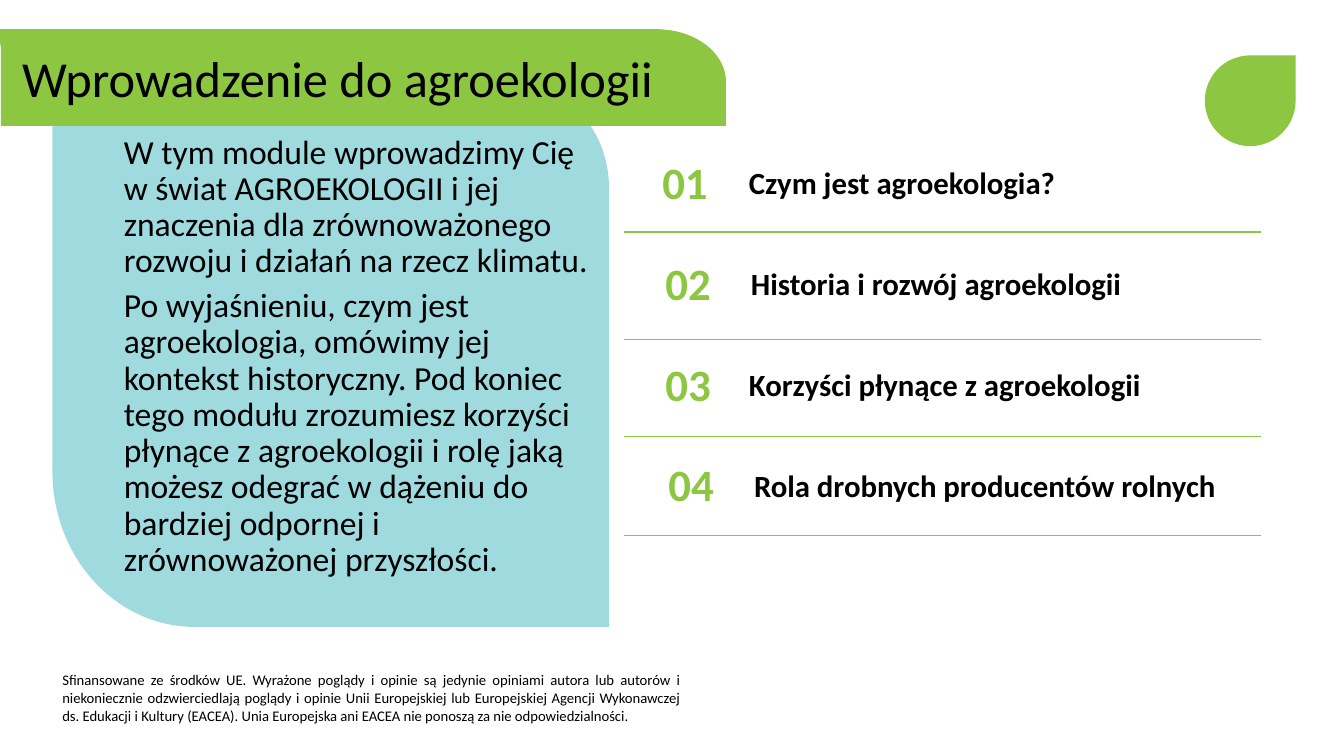
from dataclasses import dataclass
from math import cos, radians, sin

from lxml.etree import SubElement
from pptx import Presentation
from pptx.dml.color import RGBColor
from pptx.enum.shapes import MSO_CONNECTOR, MSO_SHAPE
from pptx.enum.text import MSO_ANCHOR, PP_ALIGN
from pptx.oxml.ns import qn
from pptx.util import Inches, Pt


@dataclass(frozen=True)
class Theme:
    font: str = "Calibri"
    green: RGBColor = RGBColor(0x8D, 0xC6, 0x41)
    blue: RGBColor = RGBColor(0x9F, 0xDA, 0xDF)
    black: RGBColor = RGBColor(0, 0, 0)
    title_size: float = 36
    number_size: float = 32
    body_size: float = 24
    topic_size: float = 22
    footnote_size: float = 10.5


THEME = Theme()

TITLE = "Wprowadzenie do agroekologii"
INTRODUCTION = [
    "W tym module wprowadzimy Cię w świat AGROEKOLOGII i jej znaczenia dla "
    "zrównoważonego rozwoju i działań na rzecz klimatu.",
    "Po wyjaśnieniu, czym jest agroekologia, omówimy jej kontekst historyczny. "
    "Pod koniec tego modułu zrozumiesz korzyści płynące z agroekologii i rolę "
    "jaką możesz odegrać w dążeniu do bardziej odpornej i zrównoważonej przyszłości.",
]
FOOTNOTE = (
    "Sfinansowane ze środków UE. Wyrażone poglądy i opinie są jedynie opiniami "
    "autora lub autorów i niekoniecznie odzwierciedlają poglądy i opinie Unii "
    "Europejskiej lub Europejskiej Agencji Wykonawczej ds. Edukacji i Kultury "
    "(EACEA). Unia Europejska ani EACEA nie ponoszą za nie odpowiedzialności."
)
TOPICS = [
    ("Czym jest agroekologia?", 6.41, 7.33),
    ("Historia i rozwój agroekologii", 6.44, 7.35),
    ("Korzyści płynące z agroekologii", 6.44, 7.33),
    ("Rola drobnych producentów rolnych", 6.47, 7.38),
]
TOPIC_TOP = 1.46
TOPIC_STEP = 1.0
DIVIDER_LEVELS = [2.3, 3.37, 4.33, 5.31]


def rounded_corner(center_x, center_y, radius_x, radius_y, start_angle):
    angles = [radians(start_angle + step * 3) for step in range(31)]
    return [(center_x + radius_x * cos(angle), center_y + radius_y * sin(angle))
            for angle in angles]


def paint(shape, color):
    shape.shadow.inherit = False
    shape.fill.solid()
    shape.fill.fore_color.rgb = color
    shape.line.fill.background()


def add_panel(slide, outline, color):
    points = [(Inches(x), Inches(y)) for x, y in outline]
    builder = slide.shapes.build_freeform(*points[0], scale=1.0)
    builder.add_line_segments(points[1:], close=True)
    paint(builder.convert_to_shape(), color)


def add_divider(slide, level):
    connector = slide.shapes.add_connector(
        MSO_CONNECTOR.STRAIGHT, Inches(6.19), Inches(level), Inches(12.51), Inches(level))
    connector.line.color.rgb = THEME.green
    connector.line.width = Pt(1)
    SubElement(connector._element.spPr, qn("a:effectLst"))


def add_text(slide, box, texts, size, color=THEME.black, bold=False,
             align=PP_ALIGN.LEFT, anchor=MSO_ANCHOR.MIDDLE, line_spacing=0.9):
    frame = slide.shapes.add_textbox(*map(Inches, box)).text_frame
    frame.word_wrap = True
    frame.vertical_anchor = anchor
    for index, text in enumerate(texts):
        paragraph = frame.add_paragraph() if index else frame.paragraphs[0]
        paragraph.text = text
        paragraph.alignment = align
        paragraph.line_spacing = line_spacing
        if index:
            paragraph.space_before = Pt(6)
        paragraph.font.name = THEME.font
        paragraph.font.size = Pt(size)
        paragraph.font.bold = bold
        paragraph.font.color.rgb = color


def add_topic(slide, index, topic, number_left, topic_left):
    top = TOPIC_TOP + index * TOPIC_STEP
    add_text(slide, (number_left, top, 0.77, 0.75), [f"{index + 1:02}"],
             THEME.number_size, THEME.green, bold=True, align=PP_ALIGN.CENTER)
    add_text(slide, (topic_left, top, 4.88, 0.75), [topic], THEME.topic_size, bold=True)


def add_leaf(slide):
    leaf = slide.shapes.add_shape(
        MSO_SHAPE.TEAR, Inches(11.95), Inches(0.55), Inches(0.9), Inches(0.9))
    paint(leaf, THEME.green)


def main():
    presentation = Presentation()
    presentation.slide_width = Inches(13.33)
    presentation.slide_height = Inches(7.5)
    slide = presentation.slides.add_slide(presentation.slide_layouts[6])

    introduction_outline = [
        (6.04, 6.22), *rounded_corner(1.93, 4.68, 1.41, 1.54, 90),
        (0.52, 0.82), *rounded_corner(5.08, 1.86, 0.96, 1.04, -90)]
    title_outline = [
        (-0.02, 0.29), *rounded_corner(6.51, 0.81, 0.69, 0.52, -90),
        (7.2, 1.25), (0.01, 1.25), (0.01, 0.48)]
    add_panel(slide, introduction_outline, THEME.blue)
    add_panel(slide, title_outline, THEME.green)

    for level in DIVIDER_LEVELS:
        add_divider(slide, level)
    add_text(slide, (0.52, 6.61, 6.33, 0.66), [FOOTNOTE], THEME.footnote_size,
             align=PP_ALIGN.JUSTIFY, anchor=MSO_ANCHOR.TOP, line_spacing=1.0)
    add_text(slide, (1.13, 1.29, 4.81, 4.36), INTRODUCTION, THEME.body_size,
             anchor=MSO_ANCHOR.TOP)
    for index, topic in enumerate(TOPICS):
        add_topic(slide, index, *topic)
    add_text(slide, (0.12, 0.41, 7.11, 0.79), [TITLE], THEME.title_size)
    add_leaf(slide)

    presentation.save("out.pptx")


if __name__ == "__main__":
    main()
